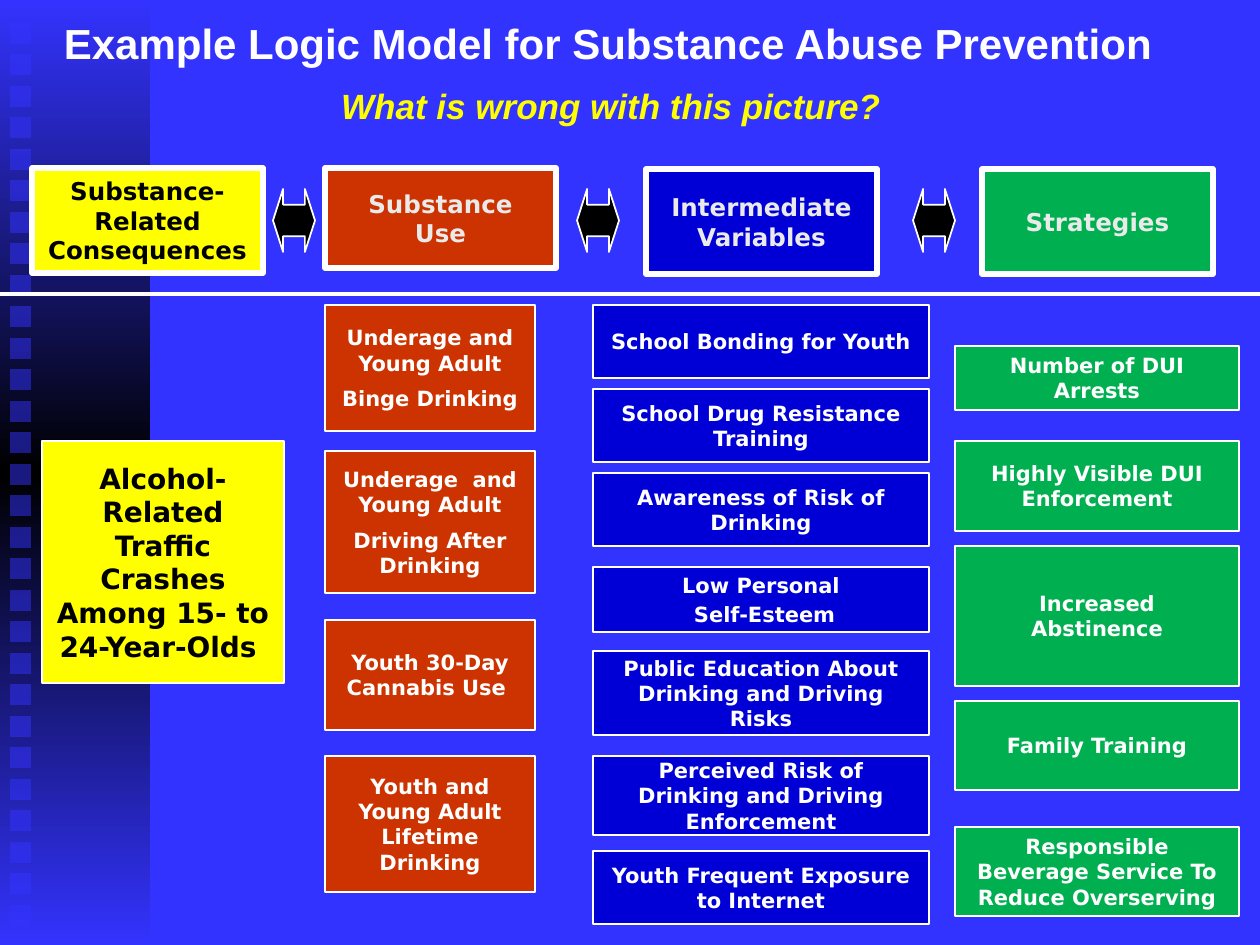
from copy import deepcopy
from lxml import etree
from pptx import Presentation
from pptx import util as u
from pptx.dml.color import RGBColor
from pptx.enum import shapes, text
from pptx.oxml.ns import qn

BLUE = RGBColor(0x33, 0x33, 0xFF)
NAVY = RGBColor(0x00, 0x00, 0xD6)
RED = RGBColor(0xCC, 0x33, 0x00)
GREEN = RGBColor(0x00, 0xB0, 0x50)
YELLOW = RGBColor(0xFF, 0xFF, 0x00)
BLACK = RGBColor(0x00, 0x00, 0x00)
WHITE = RGBColor(0xFF, 0xFF, 0xFF)
PALE = RGBColor(0xEA, 0xEA, 0xEA)

TITLE = "Example Logic Model for Substance Abuse Prevention"
QUESTION = "What is wrong with this picture?"
HEADER_WIDTH = 231
HEADERS = [  # left, top, height, fill, text colour, paragraphs
    (32, 168, 105, YELLOW, BLACK, ["Substance-Related Consequences"]),
    (325, 168, 100, RED, PALE, ["Substance", "Use"]),
    (646, 169, 105, NAVY, PALE, ["Intermediate Variables"]),
    (982, 169, 105, GREEN, PALE, ["Strategies"]),
]
ARROW_LEFTS = [273, 577, 913]
OUTCOME = ["Alcohol-Related Traffic Crashes", "Among 15- to 24-Year-Olds "]
COLUMNS = [  # left, width, fill, cards of (top, height, paragraph gap, paragraphs)
    (325, 210, RED, [
        (305, 126, 6, ["Underage and Young Adult", "Binge Drinking"]),
        (451, 142, 6, ["Underage  and Young Adult", "Driving After Drinking"]),
        (620, 110, 6, ["Youth 30-Day Cannabis Use "]),
        (756, 136, 6, ["Youth and Young Adult Lifetime Drinking"]),
    ]),
    (593, 336, NAVY, [
        (305, 73, 6, ["School Bonding for Youth"]),
        (389, 73, 6, ["School Drug Resistance Training"]),
        (473, 73, 6, ["Awareness of Risk of Drinking"]),
        (567, 65, 2, ["Low Personal", " Self-Esteem"]),
        (651, 84, 6, ["Public Education About Drinking and Driving Risks"]),
        (756, 79, 6, ["Perceived Risk of Drinking and Driving Enforcement"]),
        (851, 73, 6, ["Youth Frequent Exposure to Internet"]),
    ]),
    (955, 284, GREEN, [
        (346, 64, 6, ["Number of DUI Arrests"]),
        (441, 90, 6, ["Highly Visible DUI Enforcement"]),
        (546, 140, 0, ["Increased", "Abstinence"]),
        (701, 89, 6, ["Family Training"]),
        (827, 89, 6, ["Responsible Beverage Service To Reduce Overserving"]),
    ]),
]


def px(*lengths):
    return [u.Emu(round(length * 914400 / 126)) for length in lengths]


def write(box, paragraphs, size=12, color=WHITE, font="DejaVu Sans", italic=False, gap=0):
    frame = box.text_frame
    frame.word_wrap = True
    frame.vertical_anchor = text.MSO_ANCHOR.MIDDLE
    for index, words in enumerate(paragraphs):
        para = frame.add_paragraph() if index else frame.paragraphs[0]
        para.alignment = text.PP_ALIGN.CENTER
        para.space_before = u.Pt(gap if index else 0)
        span = para.add_run()
        span.text = words
        span.font.name = font
        span.font.size = u.Pt(size)
        span.font.bold = True
        span.font.italic = italic
        span.font.color.rgb = color


def add_box(page, area, fill, line=None, kind=shapes.MSO_SHAPE.RECTANGLE):
    box = page.shapes.add_shape(kind, *px(*area))
    box.shadow.inherit = False
    box.fill.solid()
    box.fill.fore_color.rgb = fill
    if line:
        box.line.color.rgb = WHITE
        box.line.width = u.Pt(line)
    else:
        box.line.fill.background()
    return box


def add_sidebar(page):
    band = add_box(page, (0, 0, 150, 945), BLUE)
    band.fill.gradient()
    band.fill.gradient_angle = 90
    stop_list = band._element.spPr.find(".//" + qn("a:gsLst"))
    stop_list.append(deepcopy(stop_list[0]))
    for stop, color, position in zip(band.fill.gradient_stops, (BLUE, BLACK, BLUE), (0, 0.5, 1)):
        stop.color.rgb = color
        stop.position = position
    for index in range(29):
        square = add_box(page, (10, 23 + index * 63 // 2, 21, 21), BLUE)
        shade = square._element.spPr.find(".//" + qn("a:srgbClr"))
        etree.SubElement(shade, qn("a:alpha"), val="50000")


def add_divider(page):
    divider = page.shapes.add_connector(shapes.MSO_CONNECTOR.STRAIGHT, *px(0, 294, 1260, 294))
    divider.line.color.rgb = WHITE
    divider.line.width = u.Pt(2.25)
    etree.SubElement(divider._element.spPr, qn("a:effectLst"))


def main():
    """Build the logic model slide."""
    deck = Presentation()
    deck.slide_width, deck.slide_height = px(1260, 945)
    page = deck.slides.add_slide(deck.slide_layouts[6])
    page.background.fill.solid()
    page.background.fill.fore_color.rgb = BLUE
    add_sidebar(page)

    title = page.shapes.add_textbox(*px(41, 16, 1134, 54))
    write(title, [TITLE], size=24, font="Arial")
    question = page.shapes.add_textbox(*px(315, 77, 592, 56))
    write(question, [QUESTION], size=20, color=YELLOW, font="Arial", italic=True)

    for left, top, height, fill, color, paragraphs in HEADERS:
        header = add_box(page, (left, top, HEADER_WIDTH, height), fill, line=3)
        write(header, paragraphs, size=14, color=color)
    for left in ARROW_LEFTS:
        arrow = add_box(page, (left, 189, 42, 63), BLACK, 1, shapes.MSO_SHAPE.LEFT_RIGHT_ARROW)
        arrow.adjustments[0] = 0.5
        arrow.adjustments[1] = 0.24
    add_divider(page)

    outcome = add_box(page, (42, 441, 242, 242), YELLOW, line=1)
    write(outcome, OUTCOME, size=16, color=BLACK)
    for left, width, fill, cards in COLUMNS:
        for top, height, gap, paragraphs in cards:
            card = add_box(page, (left, top, width, height), fill, line=1)
            write(card, paragraphs, gap=gap)
    deck.save("out.pptx")


if __name__ == "__main__":
    main()
